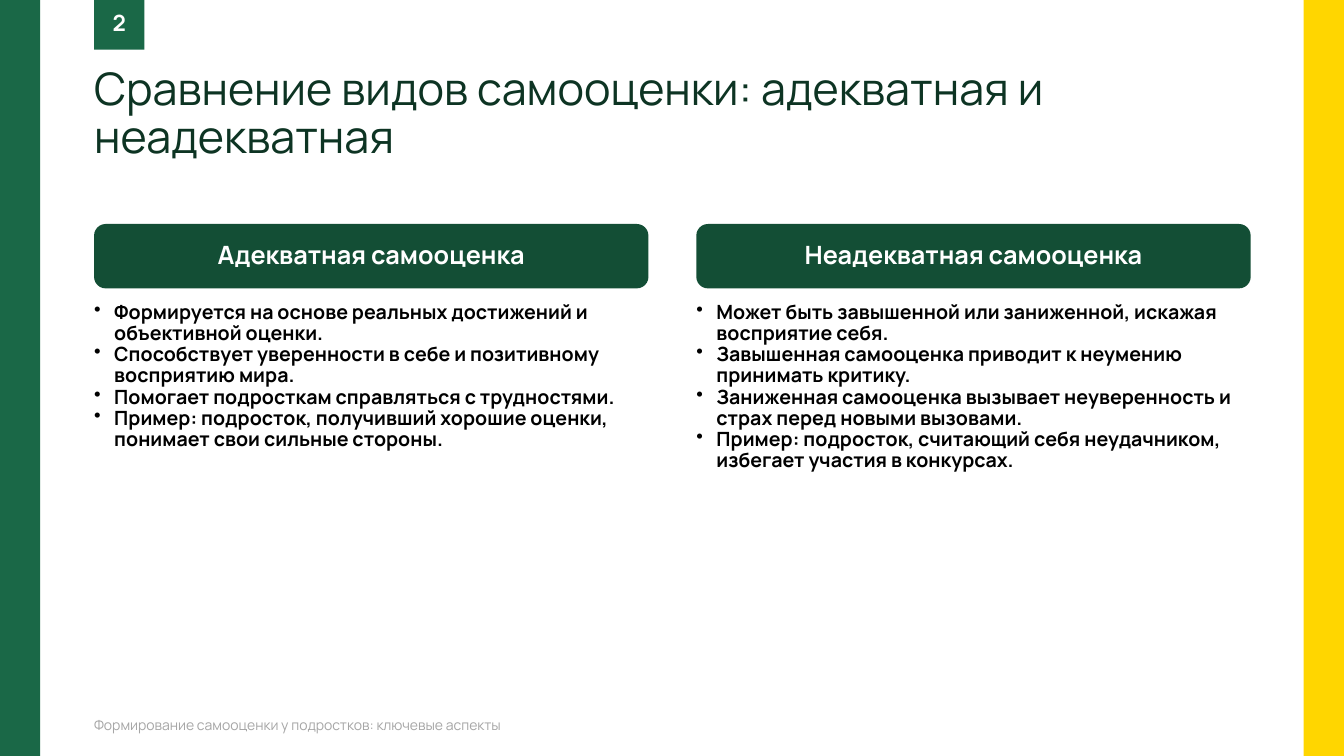
from dataclasses import dataclass

from lxml import etree
from pptx import Presentation
from pptx.dml.color import RGBColor
from pptx.enum.shapes import MSO_SHAPE
from pptx.enum.text import MSO_ANCHOR, PP_ALIGN
from pptx.oxml.ns import qn
from pptx.shapes.autoshape import Shape
from pptx.slide import Slide
from pptx.text.text import TextFrame
from pptx.util import Pt

RECTANGLE, ROUNDED = MSO_SHAPE.RECTANGLE, MSO_SHAPE.ROUNDED_RECTANGLE
TOP, MIDDLE, BOTTOM = MSO_ANCHOR.TOP, MSO_ANCHOR.MIDDLE, MSO_ANCHOR.BOTTOM
LEFT, CENTER = PP_ALIGN.LEFT, PP_ALIGN.CENTER

COLORS = {
    "green": "1A6847",
    "dark_green": "134E35",
    "title": "0D3423",
    "yellow": "FFD600",
    "grey": "A6A6A6",
    "black": "000000",
    "white": "FFFFFF",
}
FONT = "Manrope"
SLIDE_WIDTH, SLIDE_HEIGHT = 960, 540
BAND_WIDTH = 28.8
MARGIN = 67.2
COLUMN_WIDTH, COLUMN_PITCH = 396, 430.2
BULLET_INDENT = 14.4


@dataclass(frozen=True)
class Box:
    left: float
    top: float
    width: float
    height: float

    def lengths(self) -> tuple[Pt, Pt, Pt, Pt]:
        return Pt(self.left), Pt(self.top), Pt(self.width), Pt(self.height)


@dataclass(frozen=True)
class TextStyle:
    size: float
    color: str
    bold: bool = False
    align: PP_ALIGN = LEFT
    anchor: MSO_ANCHOR = TOP
    spacing: float = 0.9
    inset_y: float = 0


@dataclass(frozen=True)
class Column:
    heading: str
    points: tuple[str, ...]


TITLE_STYLE = TextStyle(32, "title", anchor=BOTTOM)
FOOTER_STYLE = TextStyle(10, "grey", anchor=MIDDLE)
NUMBER_STYLE = TextStyle(16, "white", True, CENTER, MIDDLE, inset_y=3.6)
HEADING_STYLE = TextStyle(18, "white", True, CENTER, inset_y=10.8)
POINT_STYLE = TextStyle(14, "black", True)

BANDS = (
    (Box(0, 0, BAND_WIDTH, SLIDE_HEIGHT), "green"),
    (Box(SLIDE_WIDTH - BAND_WIDTH, 0, BAND_WIDTH, SLIDE_HEIGHT), "yellow"),
)
COLUMNS = (
    Column("Адекватная самооценка", (
        "Формируется на основе реальных достижений и объективной оценки.",
        "Способствует уверенности в себе и позитивному восприятию мира.",
        "Помогает подросткам справляться с трудностями.",
        "Пример: подросток, получивший хорошие оценки, понимает свои сильные стороны.",
    )),
    Column("Неадекватная самооценка", (
        "Может быть завышенной или заниженной, искажая восприятие себя.",
        "Завышенная самооценка приводит к неумению принимать критику.",
        "Заниженная самооценка вызывает неуверенность и страх перед новыми вызовами.",
        "Пример: подросток, считающий себя неудачником, избегает участия в конкурсах.",
    )),
)


def rgb(name: str) -> RGBColor:
    return RGBColor.from_string(COLORS[name])


def write(frame: TextFrame, lines: tuple[str, ...], style: TextStyle) -> None:
    frame.word_wrap = True
    frame.vertical_anchor = style.anchor
    frame.margin_left = frame.margin_right = 0
    frame.margin_top = frame.margin_bottom = Pt(style.inset_y)
    frame.text = "\n".join(lines)
    for paragraph in frame.paragraphs:
        paragraph.alignment = style.align
        paragraph.line_spacing = style.spacing
        paragraph.space_before = Pt(0)
        paragraph.font.name = FONT
        paragraph.font.size = Pt(style.size)
        paragraph.font.bold = style.bold
        paragraph.font.color.rgb = rgb(style.color)


def add_bullets(frame: TextFrame) -> None:
    """Give every paragraph a hanging bullet."""
    for paragraph in frame.paragraphs:
        properties = paragraph._p.get_or_add_pPr()
        properties.set("marL", str(Pt(BULLET_INDENT)))
        properties.set("indent", str(-Pt(BULLET_INDENT)))
        bullet = etree.Element(qn("a:buChar"), char="•")
        properties.find(qn("a:defRPr")).addprevious(bullet)


def add_block(slide: Slide, kind: MSO_SHAPE, box: Box, color: str) -> Shape:
    block = slide.shapes.add_shape(kind, *box.lengths())
    block.shadow.inherit = False
    block.fill.solid()
    block.fill.fore_color.rgb = rgb(color)
    block.line.fill.background()
    return block


def add_text(slide: Slide, box: Box, lines: tuple[str, ...], style: TextStyle) -> TextFrame:
    frame = slide.shapes.add_textbox(*box.lengths()).text_frame
    write(frame, lines, style)
    return frame


def add_column(slide: Slide, column: Column, left: float) -> None:
    points = add_text(slide, Box(left, 216, COLUMN_WIDTH, 230.4), column.points, POINT_STYLE)
    add_bullets(points)
    heading = add_block(slide, ROUNDED, Box(left, 160, COLUMN_WIDTH, 46), "dark_green")
    heading.adjustments[0] = 0.18
    write(heading.text_frame, (column.heading,), HEADING_STYLE)


def main() -> None:
    presentation = Presentation()
    presentation.slide_width, presentation.slide_height = Pt(SLIDE_WIDTH), Pt(SLIDE_HEIGHT)
    slide = presentation.slides.add_slide(presentation.slide_layouts[5])

    for box, color in BANDS:
        add_block(slide, RECTANGLE, box, color)

    title = slide.shapes.title
    title.left, title.top, title.width, title.height = Box(MARGIN, 0, 826, 116.6).lengths()
    write(title.text_frame, ("Сравнение видов самооценки: адекватная и неадекватная",), TITLE_STYLE)

    number = add_block(slide, RECTANGLE, Box(MARGIN, -0.5, 36, 36), "green")
    write(number.text_frame, ("2",), NUMBER_STYLE)

    for index, column in enumerate(COLUMNS):
        add_column(slide, column, MARGIN + index * COLUMN_PITCH)

    add_text(slide, Box(MARGIN, 511.2, 473.8, 14.4),
             ("Формирование самооценки у подростков: ключевые аспекты",), FOOTER_STYLE)
    presentation.save("out.pptx")


if __name__ == "__main__":
    main()
